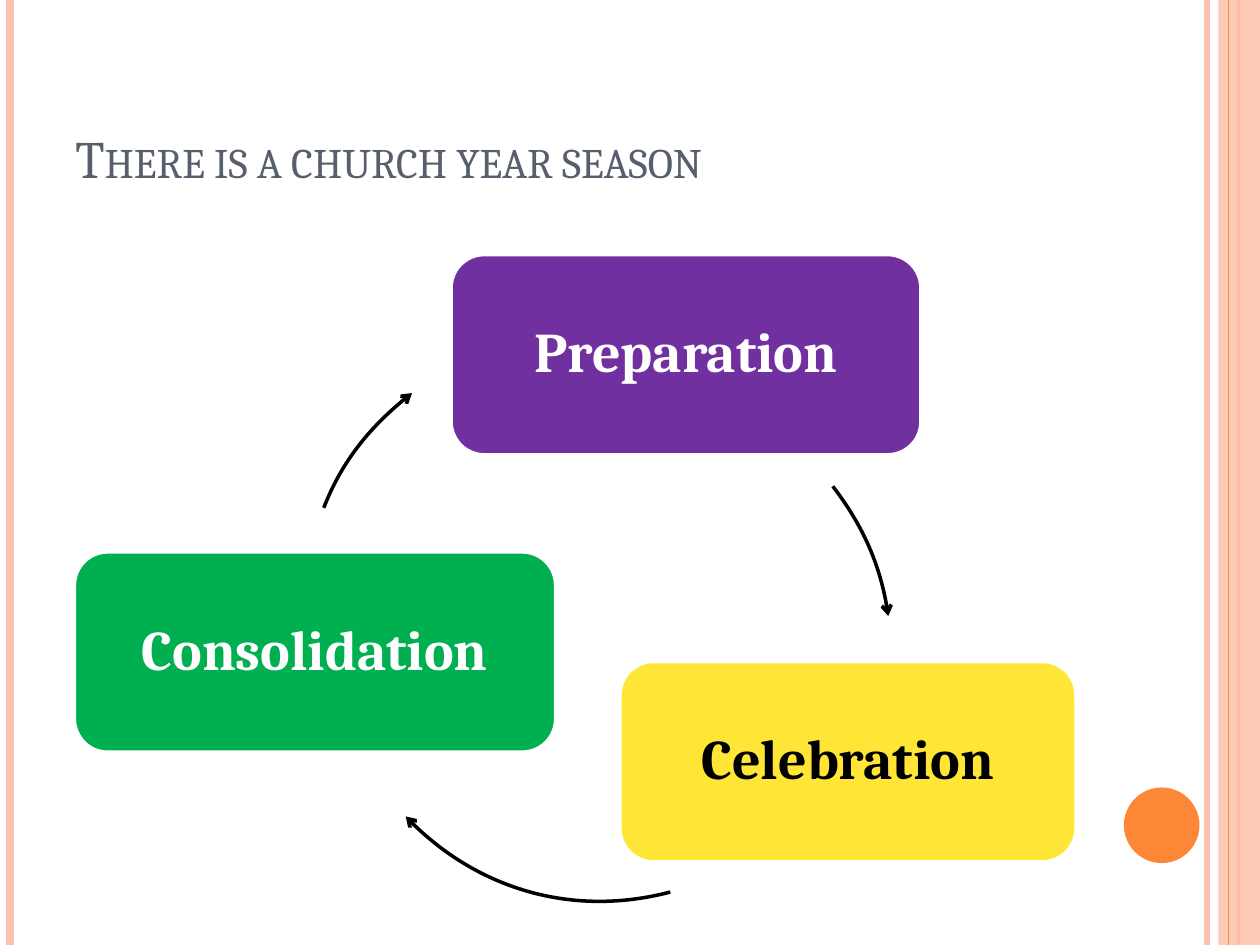
import pptx
import pptx.dml.color
import pptx.enum.shapes
import pptx.enum.text
import pptx.oxml.ns
import pptx.util
from lxml import etree

Inches = pptx.util.Inches
Pt = pptx.util.Pt
qn = pptx.oxml.ns.qn
RGB = pptx.dml.color.RGBColor.from_string
SHAPES = pptx.enum.shapes.MSO_SHAPE
ANCHOR = pptx.enum.text.MSO_ANCHOR
ALIGN = pptx.enum.text.PP_ALIGN

THEME = {
    "font": "Cambria",
    "title_size": Pt(30),
    "label_size": Pt(32),
    "title": RGB("575F6D"),
    "orange": RGB("FE8637"),
    "peach": RGB("FEC3AE"),
    "white": RGB("FFFFFF"),
    "black": RGB("000000"),
    "purple": RGB("7030A0"),
    "yellow": RGB("FFE636"),
    "green": RGB("00B050"),
}


def add_filled_shape(preset, left, top, width, height, color):
    shape = slide.shapes.add_shape(
        preset, Inches(left), Inches(top), Inches(width), Inches(height)
    )
    shape.shadow.inherit = False
    shape.fill.solid()
    shape.fill.fore_color.rgb = THEME[color]
    shape.line.fill.background()
    return shape


def write_text(shape, text, frame_format, paragraph_format, font_format):
    frame = shape.text_frame
    paragraph = frame.paragraphs[0]
    run = paragraph.add_run()
    run.text = text
    for target, values in (
        (frame, frame_format),
        (paragraph, paragraph_format),
        (run.font, font_format),
    ):
        for name, value in values.items():
            setattr(target, name, value)
    return run


presentation = pptx.Presentation()
presentation.slide_width = Inches(10)
presentation.slide_height = Inches(7.5)
slide = presentation.slides.add_slide(presentation.slide_layouts[6])

band = add_filled_shape(SHAPES.RECTANGLE, 9.67, 0, 0.33, 7.5, "peach")
band_color = band.fill._xPr.find(qn("a:solidFill"))[0]
etree.SubElement(band_color, qn("a:alpha"), val="87000")

for x, color, width in (
    (9.58, "peach", 3),
    (0.08, "peach", 4.5),
    (9.83, "orange", 1.5),
    (9.75, "orange", 0.75),
):
    stripe = slide.shapes.add_connector(
        pptx.enum.shapes.MSO_CONNECTOR.STRAIGHT,
        Inches(x), Inches(0), Inches(x), Inches(7.5),
    )
    stripe.line.color.rgb = THEME[color]
    stripe.line.width = Pt(width)
    etree.SubElement(stripe._element.spPr, qn("a:effectLst"))
    if x == 9.83:
        slide.shapes._spTree.remove(band._element)
        slide.shapes._spTree.append(band._element)

add_filled_shape(SHAPES.OVAL, 8.92, 6.25, 0.6, 0.6, "orange")

title = slide.shapes.add_textbox(Inches(0.5), Inches(0.3), Inches(8.17), Inches(1.25))
title_run = write_text(
    title,
    "There is a church year season",
    {"word_wrap": True, "vertical_anchor": ANCHOR.BOTTOM},
    {"alignment": ALIGN.LEFT},
    {"name": THEME["font"], "size": THEME["title_size"]},
)
title_run.font.color.rgb = THEME["title"]
title_run.font._element.set("cap", "small")

label_frame = {
    "word_wrap": True,
    "vertical_anchor": ANCHOR.MIDDLE,
    "margin_left": Inches(0.13),
    "margin_right": Inches(0.13),
    "margin_top": Inches(0.13),
    "margin_bottom": Inches(0.13),
}
label_paragraph = {"alignment": ALIGN.CENTER, "line_spacing": 0.9}
label_font = {"name": THEME["font"], "size": THEME["label_size"], "bold": True}

for text, left, top, width, color, text_color in (
    ("Preparation", 3.58, 2.02, 3.73, "purple", "white"),
    ("Celebration", 4.92, 5.25, 3.62, "yellow", "black"),
    ("Consolidation", 0.59, 4.38, 3.82, "green", "white"),
):
    phase = add_filled_shape(
        SHAPES.ROUNDED_RECTANGLE, left, top, width, 1.59, color
    )
    phase.line.color.rgb = THEME["white"]
    phase.line.width = Pt(2)
    run = write_text(phase, text, label_frame, label_paragraph, label_font)
    run.font.color.rgb = THEME[text_color]

for start, *curve in (
    ((6.61, 3.86), (6.84, 4.16), (7, 4.51), (7.05, 4.89)),
    ((5.32, 7.08), (4.56, 7.28), (3.76, 7.05), (3.22, 6.48)),
    ((2.57, 4.03), (2.71, 3.67), (2.96, 3.36), (3.27, 3.12)),
):
    builder = slide.shapes.build_freeform(Inches(start[0]), Inches(start[1]))
    builder.add_line_segments([(Inches(x), Inches(y)) for x, y in curve], close=False)
    arrow = builder.convert_to_shape()
    arrow.shadow.inherit = False
    arrow.fill.background()
    arrow.line.color.rgb = THEME["black"]
    arrow.line.width = Pt(2)
    etree.SubElement(arrow.line._get_or_add_ln(), qn("a:tailEnd"), type="arrow")
    segments = list(arrow._element.iter(qn("a:lnTo")))
    outline = segments[0].getparent()
    bezier = etree.SubElement(outline, qn("a:cubicBezTo"))
    for segment in segments:
        bezier.append(segment[0])
        outline.remove(segment)

presentation.save("out.pptx")
